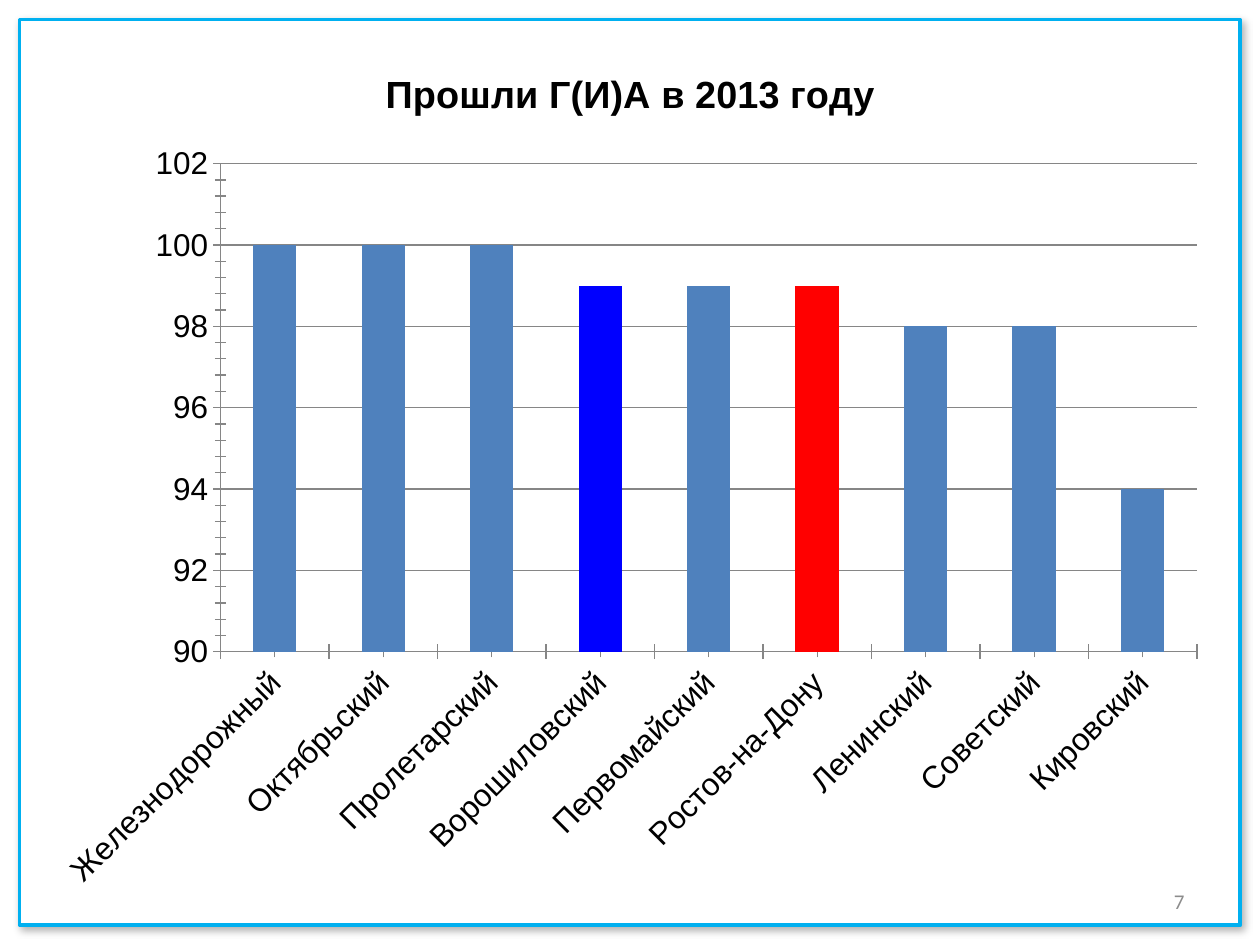
import pptx
import pptx.util
import pptx.dml.color
import pptx.chart.data
import pptx.enum.chart
import pptx.enum.text
import pptx.enum.shapes
import pptx.oxml

Pt = pptx.util.Pt
enum = pptx.enum
Tick = enum.chart.XL_TICK_MARK

TITLE = "Прошли Г(И)А в 2013 году"
RATES = [
    ("Железнодорожный", 100),
    ("Октябрьский", 100),
    ("Пролетарский", 100),
    ("Ворошиловский", 99),
    ("Первомайский", 99),
    ("Ростов-на-Дону", 99),
    ("Ленинский", 98),
    ("Советский", 98),
    ("Кировский", 94),
]
BAR = "4F81BD"
MARKED = {"Ворошиловский": "0000FF", "Ростов-на-Дону": "FF0000"}
GREY = "868686"
WIDE, HIGH = 675, 495
SHADOW = """<a:effectLst xmlns:a="http://schemas.openxmlformats.org/drawingml/2006/main">
<a:outerShdw blurRad="57150" dist="33020" dir="3180000" algn="ctr" rotWithShape="0">
<a:srgbClr val="000000"><a:alpha val="30000"/></a:srgbClr></a:outerShdw></a:effectLst>"""
LAYOUT = """<c:layout xmlns:c="http://schemas.openxmlformats.org/drawingml/2006/chart">
<c:manualLayout>{}</c:manualLayout></c:layout>"""


def color(code):
    return pptx.dml.color.RGBColor.from_string(code)


def paint(fill, code):
    fill.solid()
    fill.fore_color.rgb = color(code)


def rule(line, code, width):
    line.color.rgb = color(code)
    line.width = Pt(width)


def style(font, size=18, name="Arial", ink="000000", bold=False):
    font.size, font.name, font.bold = Pt(size), name, bold
    font.color.rgb = color(ink)


def write(frame, text, align=None, **look):
    para = frame.paragraphs[0]
    para.alignment = align
    run = para.add_run()
    run.text = text
    style(run.font, **look)


def place(node, spot, left, top, size=None):
    parts = {"layoutTarget": "inner"} if size else {}
    parts.update(xMode="edge", yMode="edge", x=left / WIDE, y=top / HIGH)
    if size:
        parts.update(w=size[0] / WIDE, h=size[1] / HIGH)
    tags = "".join(f'<c:{tag} val="{val}"/>' for tag, val in parts.items())
    new = pptx.oxml.parse_xml(LAYOUT.format(tags))
    for old in node.findall(new.tag):
        node.remove(old)
    node.insert(spot, new)


def add_frame(slide):
    box = slide.shapes.add_shape(enum.shapes.MSO_SHAPE.RECTANGLE,
                                 Pt(11.25), Pt(11.25), Pt(697.5), Pt(517.5))
    paint(box.fill, "FFFFFF")
    rule(box.line, "00B0F0", 2)
    box.shadow.inherit = False
    props = box.fill._xPr
    props.remove(props[-1])
    props.append(pptx.oxml.parse_xml(SHADOW))


def add_bars(slide):
    data = pptx.chart.data.CategoryChartData()
    data.categories = [name for name, rate in RATES]
    data.add_series("Series 1", [rate for name, rate in RATES])
    kind = enum.chart.XL_CHART_TYPE.COLUMN_CLUSTERED
    chart = slide.shapes.add_chart(kind, Pt(22.5), Pt(22.5), Pt(WIDE), Pt(HIGH), data).chart
    chart.has_legend = False
    style(chart.font)

    chart.has_title = True
    write(chart.chart_title.text_frame, TITLE, size=21.6, bold=True)
    place(chart.chart_title._element, 1, 194, 13.5)
    place(chart._chartSpace.chart.plotArea, 0, 103.5, 71, size=(558, 279))

    plot = chart.plots[0]
    plot.gap_width = 150
    plot.vary_by_categories = False
    bars = plot.series[0]
    paint(bars.format.fill, BAR)
    for spot, (name, rate) in enumerate(RATES):
        if name in MARKED:
            paint(bars.points[spot].format.fill, MARKED[name])

    cats, vals = chart.category_axis, chart.value_axis
    for axis, major, minor in ((cats, Tick.CROSS, Tick.OUTSIDE), (vals, Tick.OUTSIDE, Tick.CROSS)):
        axis.major_tick_mark, axis.minor_tick_mark = major, minor
        rule(axis.format.line, GREY, 0.75)
        style(axis.tick_labels.font)
    cats._element.txPr.bodyPr.set("rot", "-2700000")
    vals.minimum_scale, vals.maximum_scale = 90, 102
    vals.major_unit, vals.minor_unit = 2, 0.4
    vals.tick_labels.number_format = "General"
    vals.tick_labels.number_format_is_linked = False
    rule(vals.major_gridlines.format.line, GREY, 0.75)


def add_number(slide):
    frame = slide.shapes.add_textbox(Pt(516), Pt(500.5), Pt(168), Pt(28.75)).text_frame
    frame.word_wrap = True
    frame.vertical_anchor = enum.text.MSO_ANCHOR.MIDDLE
    write(frame, "7", align=enum.text.PP_ALIGN.RIGHT, size=12, name="Calibri", ink="8C8C8C")


def main():
    deck = pptx.Presentation()
    deck.slide_width, deck.slide_height = Pt(720), Pt(540)
    slide = deck.slides.add_slide(deck.slide_layouts[6])
    add_frame(slide)
    add_bars(slide)
    add_number(slide)
    deck.save("out.pptx")


if __name__ == "__main__":
    main()
